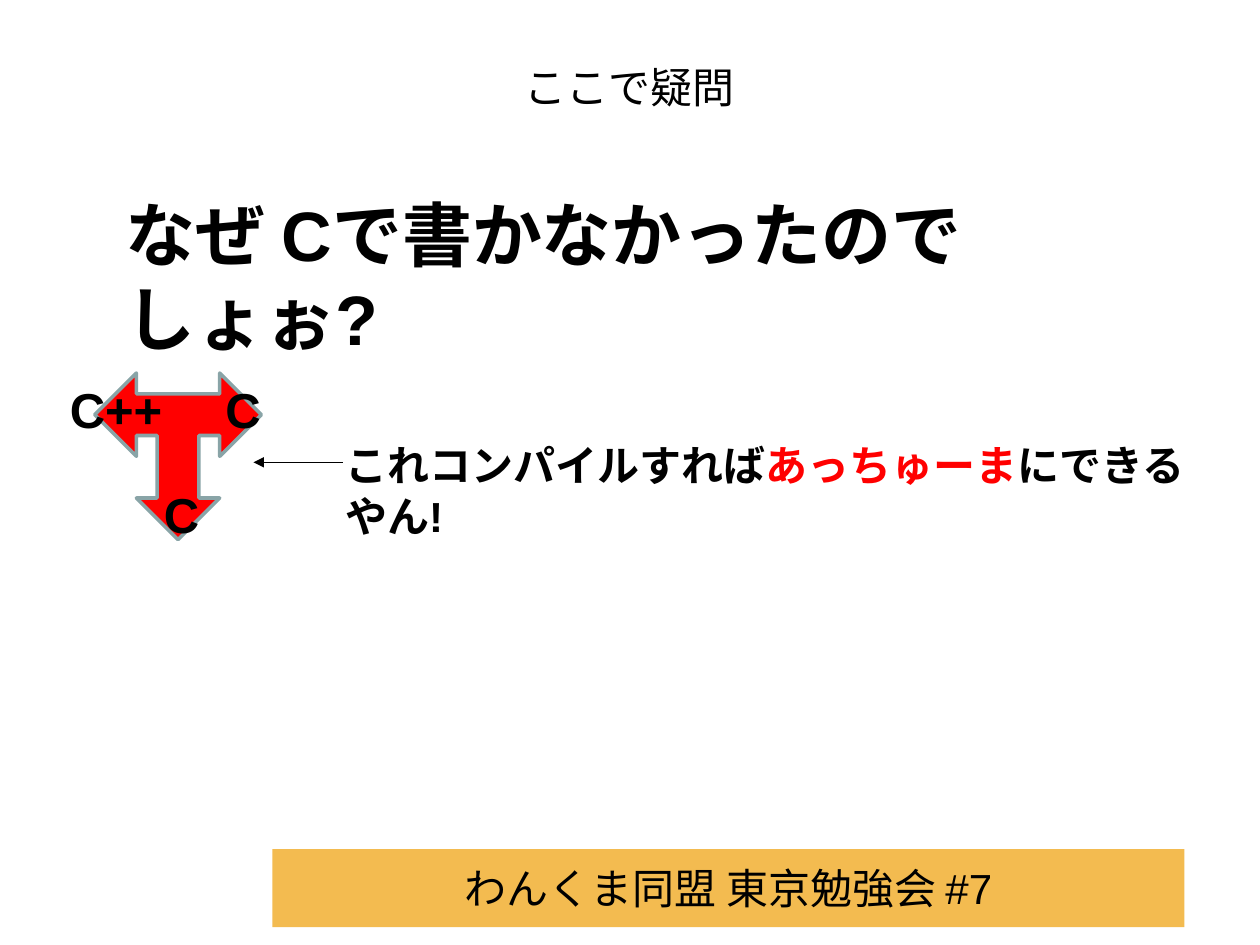
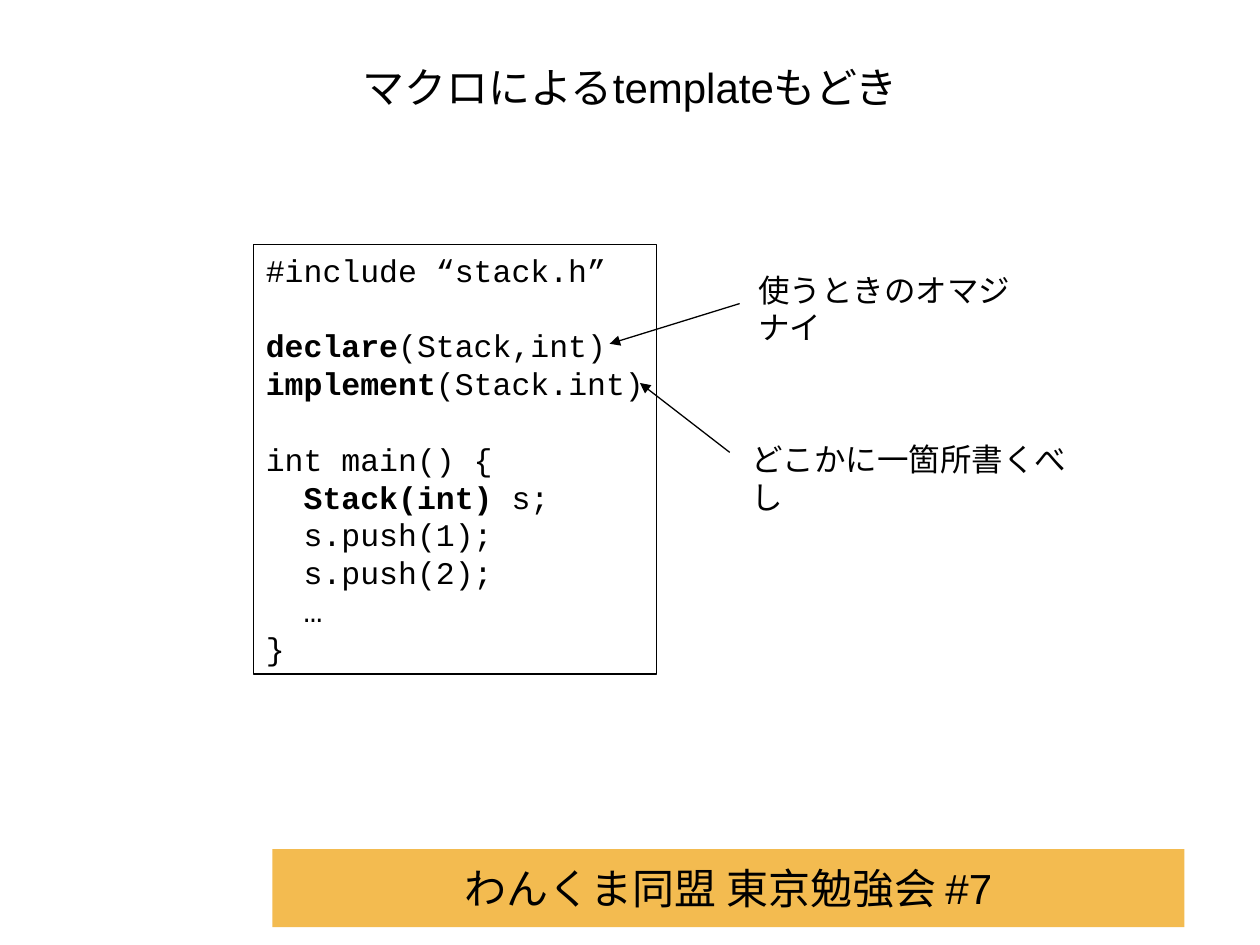
"""Builds two slides on faking C++ templates with macros."""
from lxml import etree
from pptx import Presentation
from pptx.dml.color import RGBColor
from pptx.enum.shapes import MSO_CONNECTOR, MSO_SHAPE
from pptx.enum.text import MSO_ANCHOR, PP_ALIGN
from pptx.oxml.ns import qn
from pptx.util import Cm, Pt

LEFT, CENTER = PP_ALIGN.LEFT, PP_ALIGN.CENTER
TOP, MIDDLE = MSO_ANCHOR.TOP, MSO_ANCHOR.MIDDLE
RECT, STRAIGHT = MSO_SHAPE.RECTANGLE, MSO_CONNECTOR.STRAIGHT
SANS, MONO = "Arial", "Courier New"
BLACK, RED, GOLD, GRAY = "000000", "FF0000", "F3BB50", "89A4A7"
LEAD = Pt(21.6)

FOOTER = "わんくま同盟 東京勉強会 #7"
BAND = (5.49, 17.12, 18.39, 1.57)
HEAD = (1.27, 0.76, 22.86, 1.96)

DOUBT = {
    "title": "ここで疑問",
    "ask": ("なぜ Cで書かなかったのでしょぉ?", (2.29, 3.73, 20.62, 1.96)),
    "tips": [("C++", 1.12, 7.52), ("C", 3.68, 7.52), ("C", 2.44, 9.65)],
    "hint": ([("これコンパイルすれば", BLACK), ("あっちゅーま", RED),
              ("にできるやん!", BLACK)], (6.71, 8.74, 17.78, 1.27)),
    "arrow": ((6.91, 9.32), (5.11, 9.32)),
}
TIP = (2.44, 1.45)
TEE = (1.91, 7.52)
UNIT = 0.42
HALF = [(4, 8), (2, 6), (3, 6), (3, 3), (2, 3), (2, 4), (0, 2), (2, 0), (2, 1)]

MACRO = {
    "title": "マクロによるtemplateもどき",
    "code": [
        [("#include “stack.h”", False)],
        [],
        [("declare", True), ("(Stack,int)", False)],
        [("implement", True), ("(Stack.int)", False)],
        [],
        [("int main() {", False)],
        [("  ", False), ("Stack(int)", True), (" s;", False)],
        [("  s.push(1);", False)],
        [("  s.push(2);", False)],
        [("  …", False)],
        [("}", False)],
    ],
    "notes": [
        ("使うときのオマジナイ", (15.04, 5.33, 6.12, 1.02),
         ((14.91, 6.12), (12.29, 6.93))),
        ("どこかに一箇所書くべし", (14.91, 8.74, 6.86, 1.02),
         ((14.71, 9.12), (12.9, 7.72))),
    ],
}
CODE = (5.11, 4.93, 8.13, 8.66)


def color(code):
    """Turn a hex string into a colour."""
    return RGBColor.from_string(code)


def style(para, size, bold=False, align=LEFT, font=SANS):
    """Format a whole paragraph."""
    para.alignment = align
    para.font.name, para.font.size = font, Pt(size)
    para.font.bold = bold
    para.font.color.rgb = color(BLACK)


def label(slide, text, box, size, bold=False, align=LEFT):
    """Add a wrapping text box and return its paragraph."""
    frame = slide.shapes.add_textbox(*map(Cm, box)).text_frame
    frame.word_wrap = True
    para = frame.paragraphs[0]
    para.text = text
    style(para, size, bold, align)
    return para


def panel(slide, box, anchor):
    """Add a plain rectangle without shadow."""
    shape = slide.shapes.add_shape(RECT, *map(Cm, box))
    shape.shadow.inherit = False
    shape.text_frame.vertical_anchor = anchor
    return shape


def arrow(slide, start, end):
    """Draw a thin arrow."""
    line = slide.shapes.add_connector(STRAIGHT, *map(Cm, start + end))
    line.line.color.rgb = color(BLACK)
    line.line.width = Pt(0.75)
    props = line.line._get_or_add_ln()
    etree.SubElement(props, qn("a:tailEnd"), type="triangle")
    etree.SubElement(props.getparent(), qn("a:effectLst"))


def start(deck, title):
    """Add a slide with its title and footer band."""
    slide = deck.slides.add_slide(deck.slide_layouts[5])
    head = slide.shapes.title
    head.left, head.top, head.width, head.height = map(Cm, HEAD)
    head.text_frame.vertical_anchor = MIDDLE
    band = panel(slide, BAND, MIDDLE)
    band.fill.solid()
    band.fill.fore_color.rgb = color(GOLD)
    band.line.fill.background()
    for shape, text in ((head, title), (band, FOOTER)):
        shape.text_frame.text = text
        style(shape.text_frame.paragraphs[0], 24, align=CENTER)
    return slide


def tee(slide):
    """Draw the three-way arrow from its mirrored half."""
    points = HALF + [(8 - x, y) for x, y in HALF[:0:-1]]
    pen = slide.shapes.build_freeform(*points[0], scale=Cm(UNIT))
    pen.add_line_segments(points[1:])
    shape = pen.convert_to_shape(*map(Cm, TEE))
    shape.shadow.inherit = False
    shape.fill.solid()
    shape.fill.fore_color.rgb = color(RED)
    shape.line.color.rgb = color(GRAY)
    shape.line.width = Pt(2)


def doubt(deck):
    """Build the slide that asks why not C."""
    slide = start(deck, DOUBT["title"])
    tee(slide)
    for text, left, top in DOUBT["tips"]:
        label(slide, text, (left, top) + TIP, 28, True, CENTER)
    label(slide, *DOUBT["ask"], 40, True)
    arrow(slide, *DOUBT["arrow"])
    runs, box = DOUBT["hint"]
    para = label(slide, "", box, 24, True)
    for text, tint in runs:
        run = para.add_run()
        run.text = text
        run.font.color.rgb = color(tint)


def macro(deck):
    """Build the slide with the macro listing."""
    slide = start(deck, MACRO["title"])
    shape = panel(slide, CODE, TOP)
    shape.fill.background()
    shape.line.color.rgb = color(BLACK)
    shape.line.width = Pt(0.75)
    frame = shape.text_frame
    frame.word_wrap = False
    para, gap = frame.paragraphs[0], False
    for row, runs in enumerate(MACRO["code"]):
        if not runs:
            gap = True
            continue
        if row:
            para = frame.add_paragraph()
        style(para, 18, font=MONO)
        para.line_spacing = LEAD
        if gap:
            para.space_before = LEAD
        gap = False
        for text, bold in runs:
            run = para.add_run()
            run.text = text
            run.font.bold = bold
    for text, box, ends in MACRO["notes"]:
        label(slide, text, box, 18)
        arrow(slide, *ends)


def main():
    """Build and save the deck."""
    deck = Presentation()
    deck.slide_width, deck.slide_height = Cm(25.4), Cm(19.05)
    doubt(deck)
    macro(deck)
    deck.save("out.pptx")


if __name__ == "__main__":
    main()
